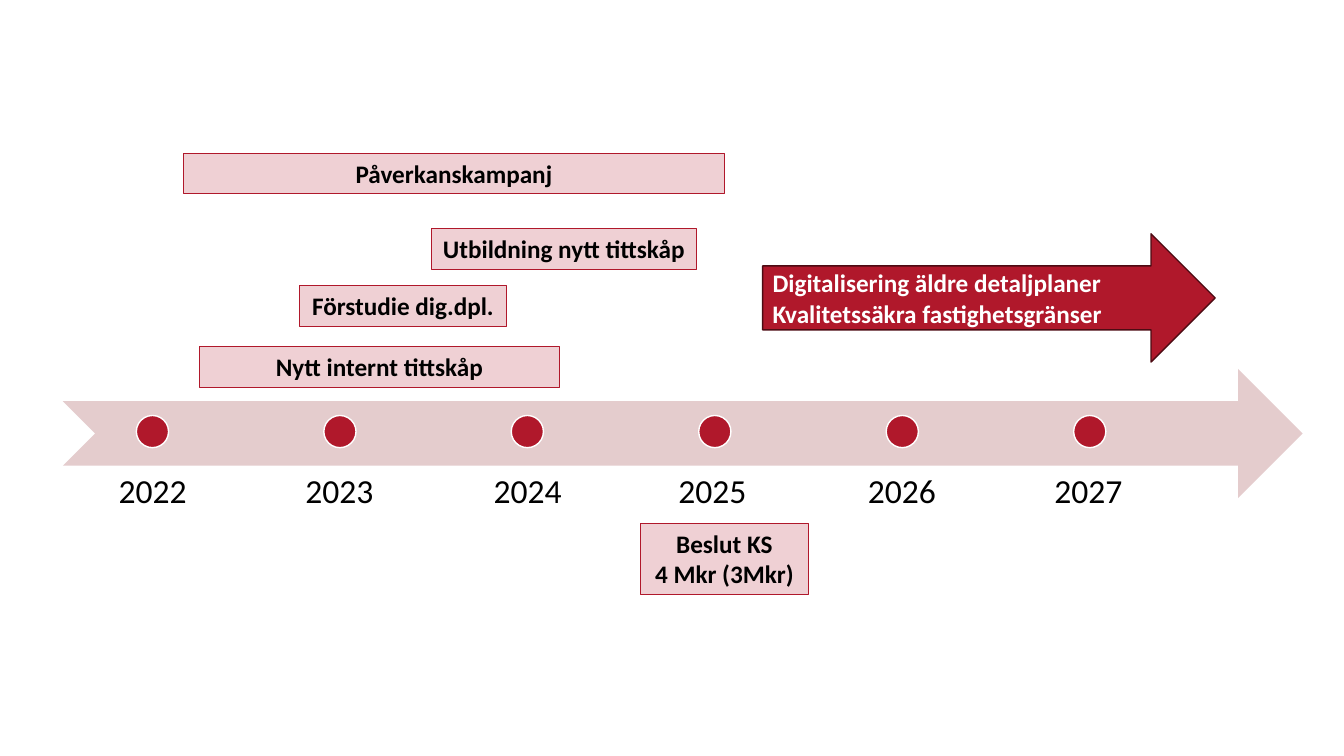
"""Build a timeline slide for 2022 to 2027 with activities and a decision."""
from lxml import etree
from pptx import Presentation
from pptx import util as u
from pptx.dml.color import RGBColor
from pptx.enum import shapes, text
from pptx.oxml.ns import qn

RED, ROSE, WINE, WHITE, BLACK = "B0182B", "E4CCCD", "4D0B13", "FFFFFF", "000000"
KIND = shapes.MSO_SHAPE
MID, TOP = text.MSO_ANCHOR.MIDDLE, text.MSO_ANCHOR.TOP
LEFT, CENTER = text.PP_ALIGN.LEFT, text.PP_ALIGN.CENTER

BAND = (44.9, 263.5, 885.6, 92.2)
YEARS = [("2022", 45.4), ("2023", 178.8), ("2024", 313.2),
         ("2025", 445.2), ("2026", 580.5), ("2027", 713.7)]
YEAR_TOP, YEAR_WIDE, YEAR_HIGH = 339, 127.4, 26
DOT_LEFT, DOT_TOP, DOT_STEP, DOT_SIZE = 97.4, 296.8, 133.9, 23
GOAL = (544.8, 167, 323.2, 91.6)
GOAL_TEXT = ["Digitalisering äldre detaljplaner", "Kvalitetssäkra fastighetsgränser"]
TAGS = [
    (["Nytt internt tittskåp"], (142.4, 247.6, 257.3, 29.1)),
    (["Utbildning nytt tittskåp"], (308.1, 163.3, 189.4, 29.1)),
    (["Påverkanskampanj"], (131, 109.4, 386.6, 29.1)),
    (["Beslut KS", "4 Mkr (3Mkr)"], (457.6, 373.8, 119.8, 50.9)),
    (["Förstudie dig.dpl."], (213.8, 203.9, 148.2, 29.1)),
]


def tint(hue):
    return RGBColor.from_string(hue)


def put(obj, form):
    for name, value in form.items():
        setattr(obj, name, value)


def draw(kind, box, fill, line=None, width=1, alpha=None):
    shape = slide.shapes.add_shape(kind, *map(u.Pt, box))
    shape.shadow.inherit = False
    shape.fill.solid()
    shape.fill.fore_color.rgb = tint(fill)
    if line:
        shape.line.color.rgb = tint(line)
        shape.line.width = u.Pt(width)
    else:
        shape.line.fill.background()
    if alpha:
        color = shape.fill._xPr.find(".//" + qn("a:srgbClr"))
        etree.SubElement(color, qn("a:alpha"), val=str(alpha * 1000))
    return shape


def write(shape, lines, size, hue, bold, align, form):
    frame = shape.text_frame
    put(frame, form)
    for i, line in enumerate(lines):
        para = frame.add_paragraph() if i else frame.paragraphs[0]
        para.alignment = align
        run = para.add_run()
        run.text = line
        put(run.font, {"name": "Calibri", "size": u.Pt(size), "bold": bold})
        run.font.color.rgb = tint(hue)


deck = Presentation()
put(deck, {"slide_width": u.Pt(960), "slide_height": u.Pt(540)})
slide = deck.slides.add_slide(deck.slide_layouts[6])

draw(KIND.NOTCHED_RIGHT_ARROW, BAND, ROSE)
for i, (year, left) in enumerate(YEARS):
    box = (left, YEAR_TOP, YEAR_WIDE, YEAR_HIGH)
    label = slide.shapes.add_textbox(*map(u.Pt, box))
    write(label, [year], 24, BLACK, False, CENTER,
          {"word_wrap": True, "vertical_anchor": MID,
           "margin_top": 0, "margin_bottom": 0})
    label.text_frame.paragraphs[0].line_spacing = 0.9
    draw(KIND.OVAL, (DOT_LEFT + i * DOT_STEP, DOT_TOP, DOT_SIZE, DOT_SIZE), RED, WHITE)

goal = draw(KIND.RIGHT_ARROW, GOAL, RED, WINE)
write(goal, GOAL_TEXT, 18, WHITE, True, LEFT,
      {"word_wrap": True, "vertical_anchor": MID})
for lines, box in TAGS:
    tag = draw(KIND.RECTANGLE, box, RED, RED, 0.75, 20)
    write(tag, lines, 18, BLACK, True, CENTER,
          {"word_wrap": False, "vertical_anchor": TOP})

deck.save("out.pptx")
